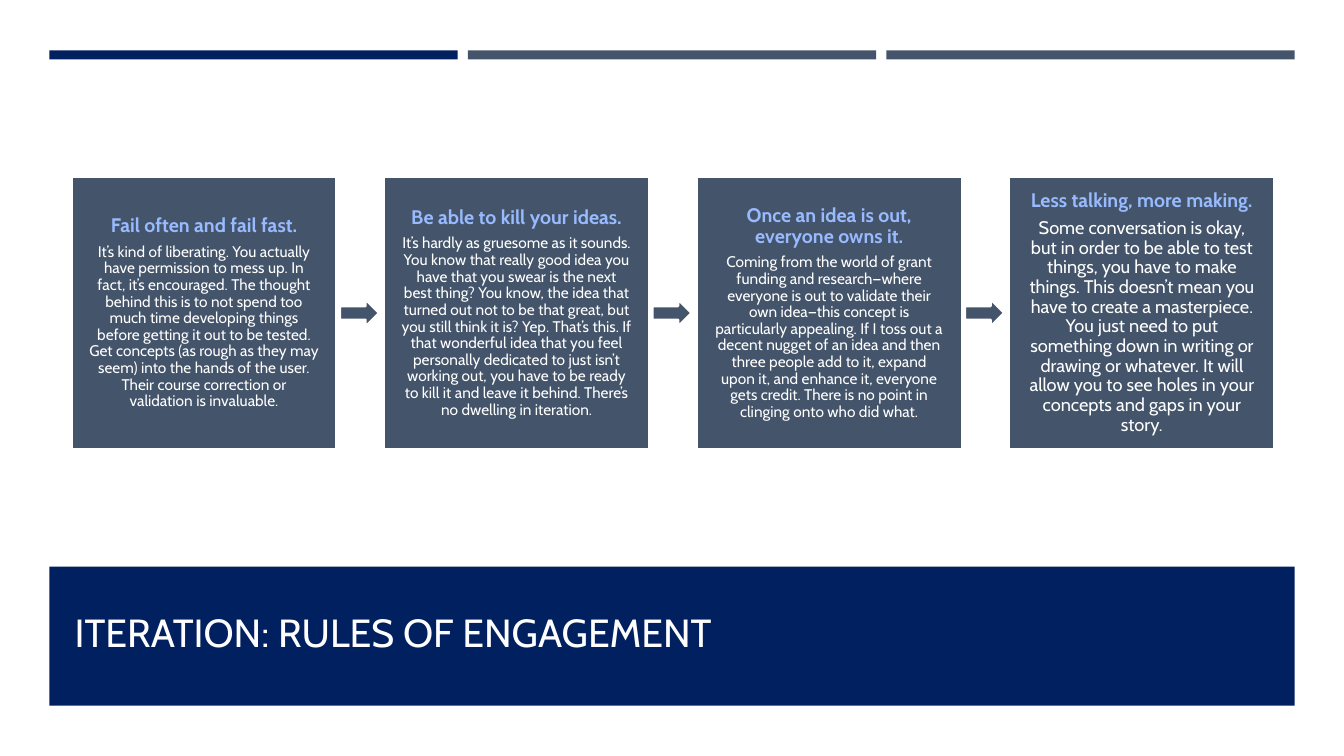
import pptx
import pptx.util
import pptx.dml.color
import pptx.enum.shapes
import pptx.enum.text

Inches = pptx.util.Inches
Pt = pptx.util.Pt
RGBColor = pptx.dml.color.RGBColor
MSO_SHAPE = pptx.enum.shapes.MSO_SHAPE
MSO_ANCHOR = pptx.enum.text.MSO_ANCHOR
PP_ALIGN = pptx.enum.text.PP_ALIGN

TITLE = "ITERATION: RULES OF ENGAGEMENT"
RULES = [
    ("Fail often and fail fast.",
     "It’s kind of liberating. You actually have permission to mess up. In fact, it’s encouraged. "
     "The thought behind this is to not spend too much time developing things before getting it "
     "out to be tested. Get concepts (as rough as they may seem) into the hands of the user. "
     "Their course correction or validation is invaluable.", 11),
    ("Be able to kill your ideas.",
     "It’s hardly as gruesome as it sounds. You know that really good idea you have that you swear "
     "is the next best thing? You know, the idea that turned out not to be that great, but you "
     "still think it is? Yep. That’s this. If that wonderful idea that you feel personally "
     "dedicated to just isn’t working out, you have to be ready to kill it and leave it behind. "
     "There’s no dwelling in iteration.", 11),
    ("Once an idea is out, everyone owns it.",
     "Coming from the world of grant funding and research—where everyone is out to validate their "
     "own idea—this concept is particularly appealing. If I toss out a decent nugget of an idea "
     "and then three people add to it, expand upon it, and enhance it, everyone gets credit. "
     "There is no point in clinging onto who did what.", 11),
    ("Less talking, more making.",
     "Some conversation is okay, but in order to be able to test things, you have to make things. "
     "This doesn’t mean you have to create a masterpiece. You just need to put something down in "
     "writing or drawing or whatever. It will allow you to see holes in your concepts and gaps in "
     "your story.", 13),
]

FONT = "Cabin"
NAVY = RGBColor(0x00, 0x20, 0x60)
SLATE = RGBColor(0x44, 0x54, 0x6A)
SKY = RGBColor(0x98, 0xBA, 0xFF)
WHITE = RGBColor(0xFF, 0xFF, 0xFF)
TITLE_WHITE = RGBColor(0xFF, 0xFE, 0xFF)

BAR_COLORS = [NAVY, SLATE, SLATE]
MARGIN, BAR_PITCH, BAR_WIDTH = 0.49, 4.15, 4.05
CARD_LEFT, CARD_TOP, CARD_PITCH = 0.71, 1.75, 3.1
CARD_WIDTH, CARD_HEIGHT, CARD_INSET = 2.63, 2.71, 0.17
ARROW_OFFSET, ARROW_WIDTH, ARROW_HEIGHT = 2.66, 0.39, 0.27


def add_block(slide, kind, left, top, width, height, color, outlined=False):
    shape = slide.shapes.add_shape(
        kind, Inches(left), Inches(top), Inches(width), Inches(height))
    shape.shadow.inherit = False
    shape.fill.solid()
    shape.fill.fore_color.rgb = color
    if outlined:
        shape.line.color.rgb = WHITE
        shape.line.width = Pt(1.75)
    else:
        shape.line.fill.background()
    return shape


def format_text(paragraph, size, color, bold=False):
    for run in paragraph.runs:
        run.font.name = FONT
        run.font.size = Pt(size)
        run.font.bold = bold
        run.font.color.rgb = color


def add_card(slide, left, heading, body, body_size):
    card = add_block(slide, MSO_SHAPE.RECTANGLE, left, CARD_TOP,
                     CARD_WIDTH, CARD_HEIGHT, SLATE, outlined=True)
    frame = card.text_frame
    frame.word_wrap = True
    frame.vertical_anchor = MSO_ANCHOR.MIDDLE
    frame.margin_left = frame.margin_right = Inches(CARD_INSET)
    frame.margin_top = frame.margin_bottom = Inches(CARD_INSET)
    frame.text = f"{heading}\n{body}"
    styles = [(14, SKY, True), (body_size, WHITE, False)]
    for paragraph, (size, color, bold) in zip(frame.paragraphs, styles):
        paragraph.alignment = PP_ALIGN.CENTER
        paragraph.line_spacing = 0.9
        paragraph.space_after = Pt(round(size * 0.35, 1))
        format_text(paragraph, size, color, bold)


def add_title(slide):
    title = slide.shapes.title
    title.left, title.top = Inches(0.64), Inches(5.76)
    title.width, title.height = Inches(12.06), Inches(0.79)
    frame = title.text_frame
    frame.text = TITLE
    frame.word_wrap = True
    frame.auto_size = pptx.enum.text.MSO_AUTO_SIZE.NONE
    frame.vertical_anchor = MSO_ANCHOR.BOTTOM
    frame.paragraphs[0].alignment = PP_ALIGN.LEFT
    format_text(frame.paragraphs[0], 28, TITLE_WHITE)
    title.element.getparent().append(title.element)


def main():
    presentation = pptx.Presentation()
    presentation.slide_width = Inches(13.33)
    presentation.slide_height = Inches(7.5)
    slide = presentation.slides.add_slide(presentation.slide_layouts[5])

    for index, color in enumerate(BAR_COLORS):
        add_block(slide, MSO_SHAPE.RECTANGLE, MARGIN + index * BAR_PITCH, 0.5,
                  BAR_WIDTH, 0.09, color)
    add_block(slide, MSO_SHAPE.RECTANGLE, MARGIN, 5.62, 12.35, 1.38, NAVY)
    add_title(slide)

    arrow_top = CARD_TOP + (CARD_HEIGHT - ARROW_HEIGHT) / 2
    for index, (heading, body, body_size) in enumerate(RULES):
        left = CARD_LEFT + index * CARD_PITCH
        add_card(slide, left, heading, body, body_size)
        if index < len(RULES) - 1:
            add_block(slide, MSO_SHAPE.RIGHT_ARROW, left + ARROW_OFFSET, arrow_top,
                      ARROW_WIDTH, ARROW_HEIGHT, SLATE, outlined=True)

    presentation.save("out.pptx")


if __name__ == "__main__":
    main()
